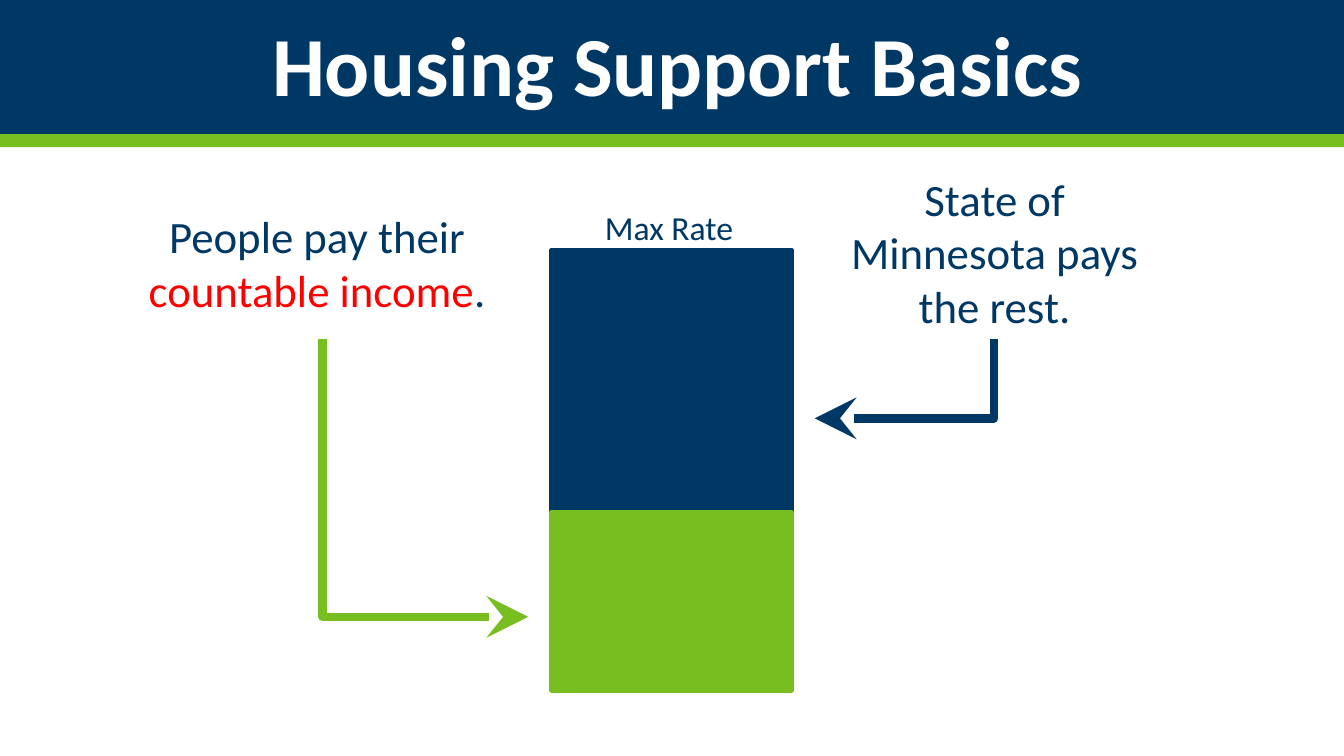
from lxml import etree
from pptx import Presentation
from pptx.dml.color import RGBColor
from pptx.enum.shapes import MSO_CONNECTOR, MSO_SHAPE
from pptx.enum.text import PP_ALIGN
from pptx.oxml.ns import qn
from pptx.util import Inches, Pt

NAVY = RGBColor(0x00, 0x38, 0x65)
GREEN = RGBColor(0x78, 0xBE, 0x21)
RED = RGBColor(0xFF, 0x00, 0x00)
WHITE = RGBColor(0xFF, 0xFF, 0xFF)
FONT = "Calibri"
SLIDE_W, SLIDE_H = 13.33, 7.5

# Content: header bands and the two shares of the rate (height, colour)
BANDS = [(1.33, NAVY), (0.13, GREEN)]
SHARES = [(2.6, NAVY), (1.77, GREEN)]
BAR_LEFT, BAR_TOP, BAR_W = 5.47, 2.48, 2.38

# Texts: left, top, width, height, size, bold, alignment, runs
TEXTS = [
    (2.6, 0.07, 8.33, 1.11, 60, True, PP_ALIGN.LEFT,
     [("Housing Support Basics", WHITE)]),
    (1.2, 2.02, 3.89, 1.34, 32, False, PP_ALIGN.CENTER,
     [("People pay their ", NAVY), ("countable income", RED), (".", NAVY)]),
    (8.19, 1.65, 3.35, 1.72, 32, False, PP_ALIGN.CENTER,
     [("State of Minnesota pays the rest.", NAVY)]),
    (5.9, 2.0, 1.49, 0.5, 24, False, PP_ALIGN.LEFT,
     [("Max Rate", NAVY)]),
]

# Arrows go down first, then across: start, end, colour
ARROWS = [
    ((3.2, 3.36), (5.24, 6.12), GREEN),
    ((9.86, 3.36), (8.08, 4.15), NAVY),
]

prs = Presentation()
prs.slide_width, prs.slide_height = Inches(SLIDE_W), Inches(SLIDE_H)
slide = prs.slides.add_slide(prs.slide_layouts[6])


def add_stack(left, top, width, blocks, outline=0):
    for height, color in blocks:
        block = slide.shapes.add_shape(
            MSO_SHAPE.RECTANGLE, Inches(left), Inches(top), Inches(width), Inches(height))
        block.shadow.inherit = False
        block.fill.solid()
        block.fill.fore_color.rgb = color
        if outline:
            block.line.color.rgb = color
            block.line.width = Pt(outline)
        else:
            block.line.fill.background()
        top += height


def add_text(left, top, width, height, size, bold, align, runs):
    frame = slide.shapes.add_textbox(
        Inches(left), Inches(top), Inches(width), Inches(height)).text_frame
    frame.word_wrap = True
    paragraph = frame.paragraphs[0]
    paragraph.alignment = align
    for words, color in runs:
        run = paragraph.add_run()
        run.text = words
        run.font.name = FONT
        run.font.size = Pt(size)
        run.font.bold = bold
        run.font.color.rgb = color


def add_bent_arrow(start, end, color):
    # A one-bend connector runs across then down; a quarter turn swaps the two
    (x1, y1), (x2, y2) = start, end
    mid_x, mid_y = (x1 + x2) / 2, (y1 + y2) / 2
    half_run, half_drop = abs(x2 - x1) / 2, (y2 - y1) / 2
    side = 1 if x2 > x1 else -1
    arrow = slide.shapes.add_connector(
        MSO_CONNECTOR.ELBOW,
        Inches(mid_x + side * half_drop), Inches(mid_y - half_run),
        Inches(mid_x - side * half_drop), Inches(mid_y + half_run))
    arrow.line.color.rgb = color
    arrow.line.width = Pt(6)
    props = arrow.element.spPr
    turn = 270 if side > 0 else 90
    props.find(qn("a:xfrm")).set("rot", str(turn * 60000))
    props.find(qn("a:prstGeom")).set("prst", "bentConnector2")
    line = props.find(qn("a:ln"))
    etree.SubElement(line, qn("a:round"))
    etree.SubElement(line, qn("a:tailEnd"), type="stealth", w="lg", len="lg")
    etree.SubElement(props, qn("a:effectLst"))


# Header, stacked bar, arrows, texts
add_stack(0, 0, SLIDE_W, BANDS)
add_stack(BAR_LEFT, BAR_TOP, BAR_W, SHARES, outline=3)
for arrow_spec in ARROWS:
    add_bent_arrow(*arrow_spec)
for text_spec in TEXTS:
    add_text(*text_spec)

prs.save("out.pptx")
